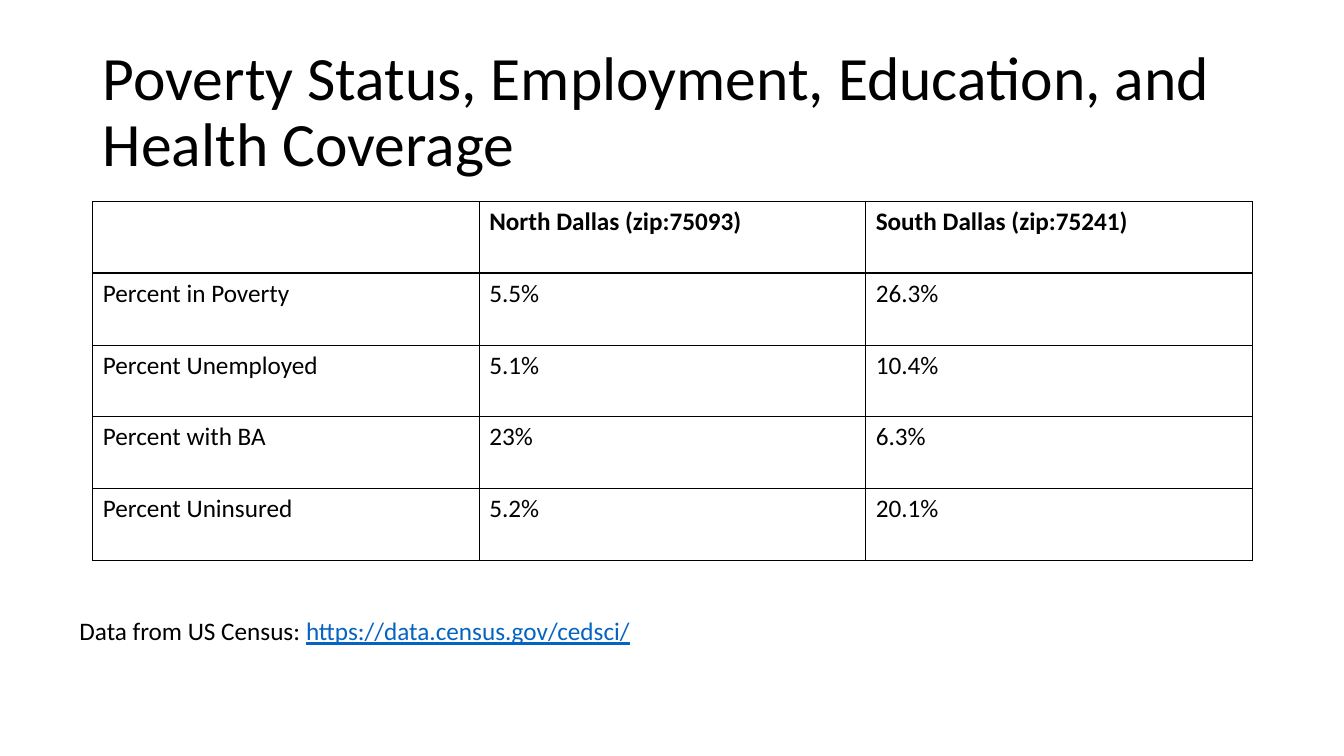
from lxml.etree import SubElement
from pptx import Presentation
from pptx.dml.color import RGBColor
from pptx.enum.text import MSO_ANCHOR, MSO_AUTO_SIZE, PP_ALIGN
from pptx.oxml.ns import qn
from pptx.util import Inches, Pt

COLORS = {"text": "000000", "border": "000000", "link": "0563C1", "cell": "FFFFFF"}
FONT = "Calibri"


def add_text(paragraph, text, size=18, color="text", bold=False, underline=False):
    run = paragraph.add_run()
    run.text = text
    run.font.name = FONT
    run.font.size = Pt(size)
    run.font.bold = bold
    run.font.underline = underline
    run.font.color.rgb = RGBColor.from_string(COLORS[color])


def add_border(cell, side, width):
    line = SubElement(cell._tc.get_or_add_tcPr(), qn(f"a:ln{side}"), w=str(Pt(width)))
    fill = SubElement(line, qn("a:solidFill"))
    SubElement(fill, qn("a:srgbClr"), val=COLORS["border"])


presentation = Presentation()
presentation.slide_width = Inches(13.33)
presentation.slide_height = Inches(7.5)
slide = presentation.slides.add_slide(presentation.slide_layouts[5])

# Title
title = slide.shapes.title
title.left, title.top = Inches(0.92), Inches(0.4)
title.width, title.height = Inches(11.5), Inches(1.45)
title.text_frame.auto_size = MSO_AUTO_SIZE.NONE
title.text_frame.word_wrap = True
title.text_frame.vertical_anchor = MSO_ANCHOR.MIDDLE
paragraph = title.text_frame.paragraphs[0]
paragraph.alignment = PP_ALIGN.LEFT
paragraph.line_spacing = 0.9
add_text(paragraph, "Poverty Status, Employment, Education, and Health Coverage", size=44)

# Comparison table
rows = [
    ("", "North Dallas (zip:75093)", "South Dallas (zip:75241)"),
    ("Percent in Poverty", "5.5%", "26.3%"),
    ("Percent Unemployed", "5.1%", "10.4%"),
    ("Percent with BA", "23%", "6.3%"),
    ("Percent Uninsured", "5.2%", "20.1%"),
]
table = slide.shapes.add_table(
    len(rows), len(rows[0]), Inches(0.92), Inches(2), Inches(11.5), Inches(3.56)
).table
table.horz_banding = False
for row_index, row in enumerate(rows):
    for column_index, text in enumerate(row):
        cell = table.cell(row_index, column_index)
        # The rule under the header is heavier than the others
        widths = {"L": 1, "R": 1, "T": 1, "B": 1}
        if row_index == 0:
            widths["B"] = 1.5
        elif row_index == 1:
            widths["T"] = 1.5
        for side, width in widths.items():
            add_border(cell, side, width)
        cell.fill.solid()
        cell.fill.fore_color.rgb = RGBColor.from_string(COLORS["cell"])
        if text:
            add_text(cell.text_frame.paragraphs[0], text, bold=row_index == 0)

# Data credit
credit = slide.shapes.add_textbox(Inches(0.69), Inches(6.06), Inches(11.73), Inches(0.4))
credit.text_frame.word_wrap = True
credit.text_frame.auto_size = MSO_AUTO_SIZE.SHAPE_TO_FIT_TEXT
paragraph = credit.text_frame.paragraphs[0]
add_text(paragraph, "Data from US Census: ")
add_text(paragraph, "https://data.census.gov/cedsci/", color="link", underline=True)

presentation.save("out.pptx")
